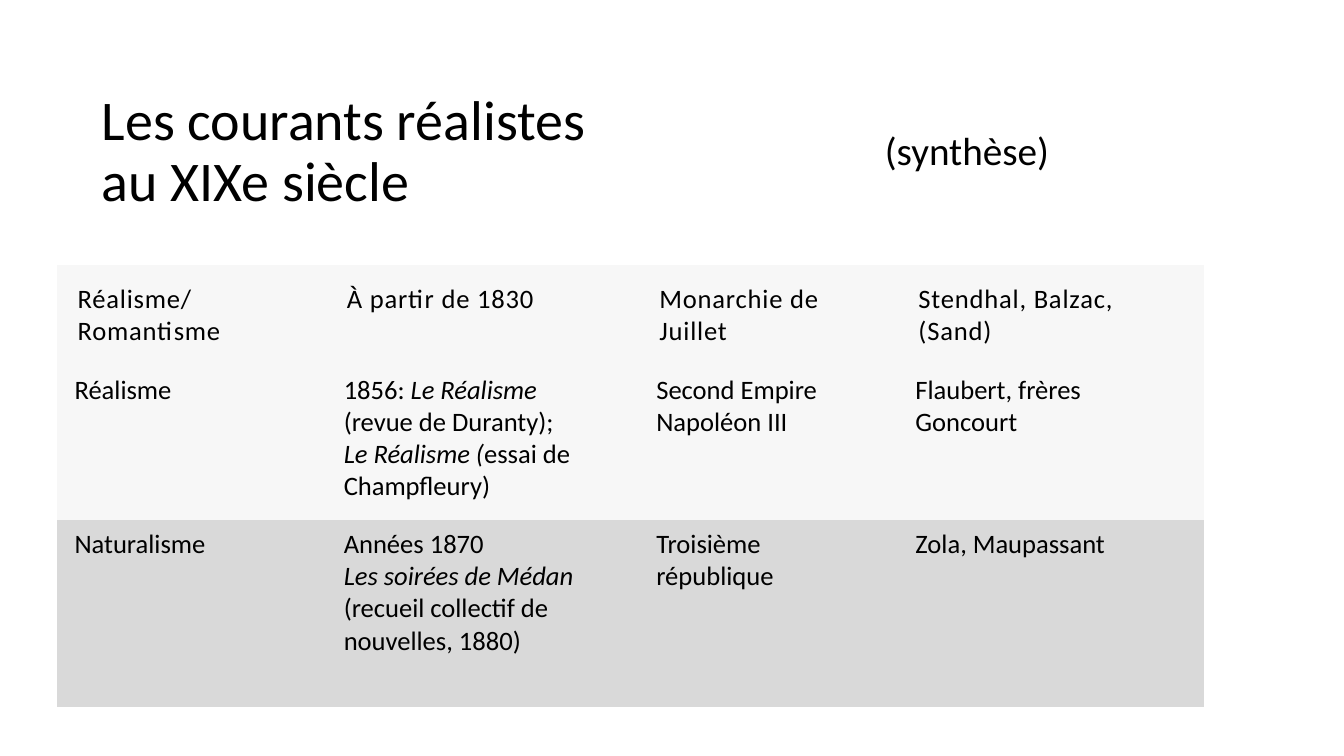
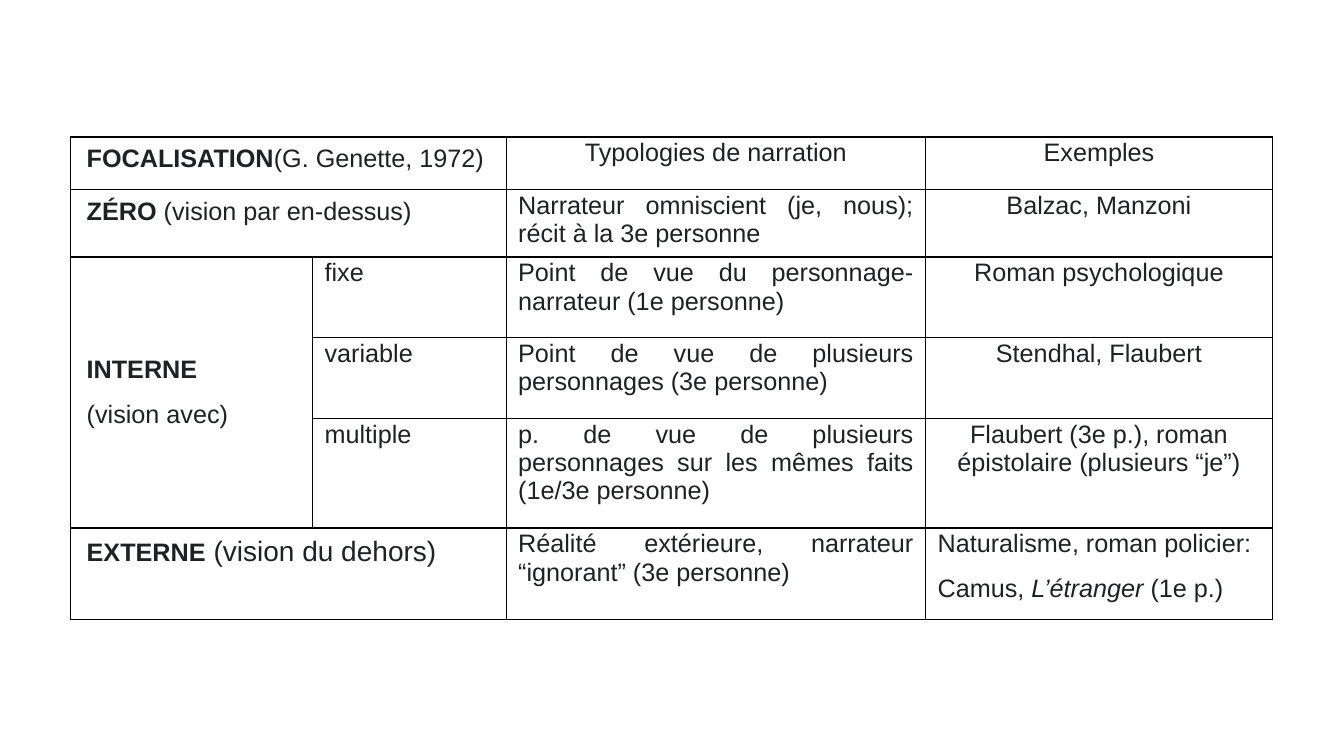
"""Build two slides on French realist movements and narrative focalisation."""
from lxml import etree
from pptx import Presentation
from pptx.dml.color import RGBColor
from pptx.enum.text import MSO_ANCHOR, MSO_AUTO_SIZE, PP_ALIGN
from pptx.oxml.ns import qn
from pptx.util import Inches, Pt

LEFT, CENTER, JUSTIFY = PP_ALIGN.LEFT, PP_ALIGN.CENTER, PP_ALIGN.JUSTIFY
MIDDLE, TOP = MSO_ANCHOR.MIDDLE, MSO_ANCHOR.TOP
NO_AUTOFIT = MSO_AUTO_SIZE.NONE

COLORS = {"text": "000000", "ink": "202122", "line": "000000",
          "light": "F7F7F7", "grey": "D9D9D9"}
NO_STYLE = "{2D5ABB26-0587-4C30-8999-92F81FD0307C}"
BOLD, ITALIC, LARGE = {"bold": True}, {"italic": True}, {"size": Pt(20)}
HEAD_INSETS, BODY_INSETS = (0.2, 0.18, 0.2, 0.18), (0.17, 0.08, 0.17, 0.12)
LABEL_INSETS, DETAIL_INSETS = (0.16, 0.08, 0.16, 0.08), (0.12, 0.02, 0.12, 0)

MOVEMENTS = [
    [["Réalisme/", "Romantisme"], ["À partir de 1830"],
     ["Monarchie de Juillet"], ["Stendhal, Balzac, (Sand)"]],
    [["Réalisme"],
     [(("1856: ", {}), ("Le Réalisme", ITALIC)), "(revue de Duranty);",
      (("Le Réalisme (", ITALIC), ("essai de Champfleury)", {}))],
     ["Second Empire", "Napoléon III"], ["Flaubert, frères Goncourt"]],
    [["Naturalisme"],
     ["Années 1870", (("Les soirées de Médan", ITALIC),),
      "(recueil collectif de nouvelles, 1880)"],
     ["Troisième république"], ["Zola, Maupassant"]],
]

FOCALISATION = [
    [[(("FOCALISATION", BOLD), ("(G. Genette, 1972)", {}))], [],
     ["Typologies de narration"], ["Exemples"]],
    [[(("ZÉRO", BOLD), (" (vision par en-dessus)", {}))], [],
     ["Narrateur omniscient (je, nous); récit à la 3e personne"],
     ["Balzac, Manzoni"]],
    [[(("INTERNE", BOLD),), "(vision avec)"], ["fixe"],
     ["Point de vue du personnage-narrateur (1e personne)"],
     ["Roman psychologique"]],
    [[], ["variable"],
     ["Point de vue de plusieurs personnages (3e personne)"],
     ["Stendhal, Flaubert"]],
    [[], ["multiple"],
     ["p. de vue de plusieurs personnages sur les mêmes faits (1e/3e personne)"],
     ["Flaubert (3e p.), roman épistolaire (plusieurs “je”)"]],
    [[(("EXTERNE", BOLD), (" (vision du dehors)", LARGE))], [],
     ["Réalité extérieure, narrateur “ignorant” (3e personne)"],
     ["Naturalisme, roman policier:",
      (("Camus, ", {}), ("L’étranger ", ITALIC), ("(1e p.)", {}))]],
]


def style_font(font, name, size, color):
    """Apply the base look of a run."""
    font.name, font.size = name, Pt(size)
    font.bold = font.italic = False
    font.color.rgb = RGBColor.from_string(COLORS[color])


def fill_placeholder(sp, text, box, size, align):
    """Move a placeholder and give it one unbulleted paragraph."""
    sp.left, sp.top, sp.width, sp.height = map(Inches, box)
    tf = sp.text_frame
    tf.text = text
    tf.auto_size, tf.vertical_anchor = NO_AUTOFIT, MIDDLE
    p = tf.paragraphs[0]
    p.alignment, p.line_spacing = align, 0.9
    pPr = p._p.get_or_add_pPr()
    pPr.set("marL", "0")
    pPr.set("indent", "0")
    etree.SubElement(pPr, qn("a:buNone"))
    style_font(p.runs[0].font, "Calibri", size, "text")
    return tf


def add_grid(slide, box, cols, rows):
    """Add an unstyled table with the given column widths and row heights."""
    frame = slide.shapes.add_table(len(rows), len(cols), *map(Inches, box))
    table = frame.table
    table.first_row = table.horz_banding = False
    table._tbl.tblPr.find(qn("a:tableStyleId")).text = NO_STYLE
    for column, width in zip(table.columns, cols):
        column.width = Inches(width)
    for row, height in zip(table.rows, rows):
        row.height = Inches(height)
    return table


def fill_cell(cell, paragraphs, insets, font, align=LEFT, space=0):
    """Write paragraphs, each a string or a tuple of (text, style) runs."""
    (cell.margin_left, cell.margin_top,
     cell.margin_right, cell.margin_bottom) = map(Inches, insets)
    tf = cell.text_frame
    for i, runs in enumerate(paragraphs):
        p = tf.add_paragraph() if i else tf.paragraphs[0]
        p.alignment = align
        p.space_before = p.space_after = Pt(space)
        for text, style in ([(runs, {})] if isinstance(runs, str) else runs):
            r = p.add_run()
            r.text = text
            style_font(r.font, *font)
            for name, value in style.items():
                setattr(r.font, name, value)


def space_letters(cell, points):
    """Widen the letter spacing of a cell."""
    for p in cell.text_frame.paragraphs:
        for r in p.runs:
            r.font._element.set("spc", str(round(points * 100)))


def border_cell(cell, color, width):
    """Draw a solid line on the four sides of a cell."""
    tcPr = cell._tc.get_or_add_tcPr()
    for i, side in enumerate(("lnL", "lnR", "lnT", "lnB")):
        ln = etree.Element(qn(f"a:{side}"), w=str(Pt(width)))
        fill = etree.SubElement(ln, qn("a:solidFill"))
        etree.SubElement(fill, qn("a:srgbClr"), val=COLORS[color])
        tcPr.insert(i, ln)


def build_movements(prs):
    """Build the slide on the realist movements."""
    slide = prs.slides.add_slide(prs.slide_layouts[1])
    tf = fill_placeholder(slide.shapes.title, "Les courants réalistes au XIXe siècle",
                          (0.91, 0.6, 5.65, 1.83), 40, LEFT)
    tf.margin_right = Inches(0.3)
    tf = fill_placeholder(slide.placeholders[1], "(synthèse)",
                          (6.77, 0.6, 5.64, 1.83), 28, CENTER)
    tf.paragraphs[0].space_before = Pt(10)
    table = add_grid(slide, (0.57, 2.63, 11.37, 4.38),
                     (2.67, 3.1, 2.57, 3.03), (0.88, 1.53, 1.85))
    for i, row in enumerate(MOVEMENTS):
        for j, paragraphs in enumerate(row):
            cell = table.cell(i, j)
            fill_cell(cell, paragraphs, BODY_INSETS if i else HEAD_INSETS,
                      ("Calibri", 19, "text"))
            cell.fill.solid()
            cell.fill.fore_color.rgb = RGBColor.from_string(
                COLORS["grey" if i == 2 else "light"])
            if i == 0:
                space_letters(cell, 0.6)


def build_focalisation(prs):
    """Build the slide on the kinds of focalisation."""
    slide = prs.slides.add_slide(prs.slide_layouts[6])
    table = add_grid(slide, (0.7, 1.36, 11.93, 4.78),
                     (2.4, 1.92, 4.16, 3.44), (0.52, 0.67, 0.8, 0.8, 1.09, 0.91))
    last = len(FOCALISATION) - 1
    for i, row in enumerate(FOCALISATION):
        for j, paragraphs in enumerate(row):
            cell = table.cell(i, j)
            centered = (i == 0 and j == 2) or (j == 3 and i < last)
            fill_cell(cell, paragraphs, DETAIL_INSETS if j else LABEL_INSETS,
                      ("Arial", 18, "ink"), CENTER if centered else JUSTIFY, 6)
            cell.vertical_anchor = MIDDLE if (i, j) == (2, 0) else TOP
            cell.fill.background()
            border_cell(cell, "line", 1)
    for i in (0, 1, last):
        table.cell(i, 0).merge(table.cell(i, 1))
    table.cell(2, 0).merge(table.cell(4, 0))


def main():
    """Build and save the presentation."""
    prs = Presentation()
    prs.slide_width, prs.slide_height = Inches(13.33), Inches(7.5)
    build_movements(prs)
    build_focalisation(prs)
    prs.save("out.pptx")


if __name__ == "__main__":
    main()
